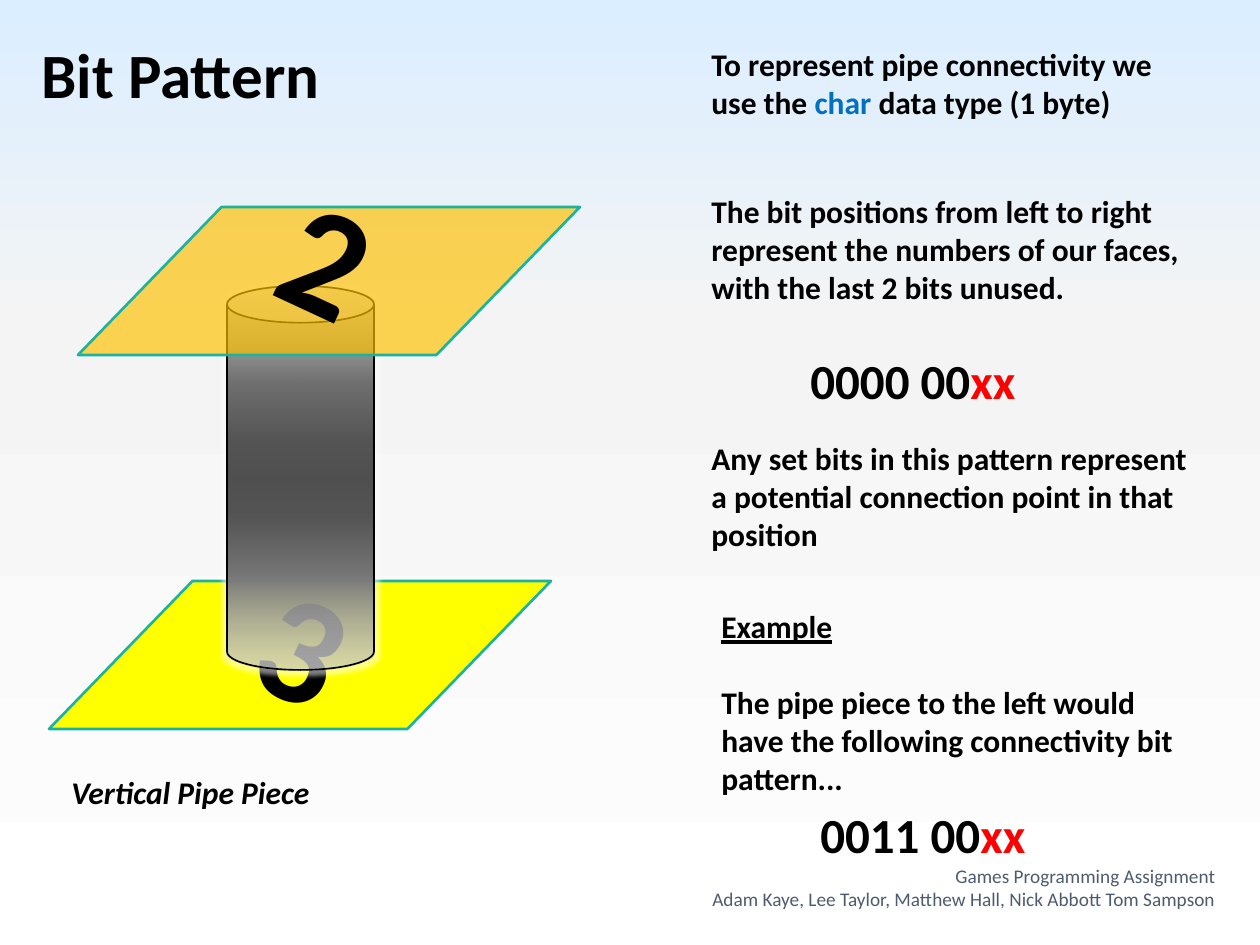
from lxml.etree import SubElement
from pptx import Presentation
from pptx.dml.color import RGBColor
from pptx.enum.shapes import MSO_SHAPE
from pptx.enum.text import MSO_ANCHOR, MSO_AUTO_SIZE, PP_ALIGN
from pptx.oxml.ns import qn
from pptx.util import Emu, Pt

BLACK, RED, BLUE, SLATE = "000000", "FF0000", "0070C0", "4E5B6F"
TEAL, YELLOW, AMBER = "1AB39F", "FFFF00", "FFC000"
SKY = [(0, "FFFFFF", 100), (65, "F4F4F4", 100), (100, "DBEEFF", 100)]
STEEL = [(0, "C0C0C0", 77), (25, "707070", 100), (40, "555555", 100), (50, "505050", 100),
         (60, "555555", 100), (75, "767676", 100), (100, "C0C0C0", 56)]


def px(length):
    return Emu(round(length * 914400 / 126))


def rgb(code):
    return RGBColor.from_string(code)


class SlideBuilder:
    """Holds the text style and the slide, and draws each kind of element."""

    def __init__(self, deck, style):
        self.style = style
        self.slide = deck.slides.add_slide(deck.slide_layouts[6])

    def add_color(self, parent, code, opacity):
        color = SubElement(parent, qn("a:srgbClr"), val=code)
        if opacity < 100:
            SubElement(color, qn("a:alpha"), val=str(opacity * 1000))

    def gradient(self, fill, owner, stops, angle):
        fill.gradient()
        fill.gradient_angle = angle
        stop_list = next(owner.iter(qn("a:gsLst")))
        for old_stop in list(stop_list):
            stop_list.remove(old_stop)
        for position, code, opacity in stops:
            stop = SubElement(stop_list, qn("a:gs"), pos=str(position * 1000))
            self.add_color(stop, code, opacity)

    def background(self, stops, angle):
        self.gradient(self.slide.background.fill, self.slide.element, stops, angle)

    def outlined(self, preset, box, line, weight):
        shape = self.slide.shapes.add_shape(preset, *map(px, box))
        shape.shadow.inherit = False
        shape.line.color.rgb = rgb(line)
        shape.line.width = Pt(weight)
        return shape

    def face(self, left, top, code, opacity=100):
        face = self.outlined(MSO_SHAPE.PARALLELOGRAM, (left, top, 502, 148), TEAL, 1.5)
        face.adjustments[0] = 0.97
        face.fill.solid()
        face.fill.fore_color.rgb = rgb(code)
        if opacity < 100:
            color = face.element.spPr.find(qn("a:solidFill"))[0]
            SubElement(color, qn("a:alpha"), val=str(opacity * 1000))

    def pipe(self, box):
        pipe = self.outlined(MSO_SHAPE.CAN, box, BLACK, 0.94)
        self.gradient(pipe.fill, pipe.element, STEEL, 270)
        effects = pipe.element.spPr.find(qn("a:effectLst"))
        glow = SubElement(effects, qn("a:glow"), rad=str(px(9)))
        self.add_color(glow, "FFFFFF", 50)

    def text(self, box, *paragraphs, rotation=0, gap=0, align=PP_ALIGN.LEFT,
             anchor=MSO_ANCHOR.TOP, fit=MSO_AUTO_SIZE.SHAPE_TO_FIT_TEXT, **style):
        label = self.slide.shapes.add_textbox(*map(px, box))
        label.rotation = rotation
        frame = label.text_frame
        for name, value in {"word_wrap": True, "auto_size": fit, "vertical_anchor": anchor}.items():
            setattr(frame, name, value)
        for index, runs in enumerate(paragraphs):
            paragraph = frame.add_paragraph() if index else frame.paragraphs[0]
            paragraph.alignment = align
            paragraph.space_before = Pt(gap if index else 0)
            for words, changes in runs:
                run = paragraph.add_run()
                run.text = words
                look = {**self.style, **style, **changes}
                run.font.color.rgb = rgb(look.pop("color"))
                for name, value in look.items():
                    setattr(run.font, name, value)

    def face_number(self, left, top, digit):
        self.text((left, top, 147, 199), [(digit, {})], rotation=24.9, size=Pt(88))

    def bits(self, left, top, width, pattern):
        self.text((left, top, width, 72), [(pattern, {}), ("xx", {"color": RED})], size=Pt(28))


def main():
    deck = Presentation()
    deck.slide_width, deck.slide_height = px(1260), px(945)
    page = SlideBuilder(deck, {"name": "Calibri", "size": Pt(18), "bold": True, "color": BLACK})
    page.background(SKY, 90)
    page.text((29, 29, 798, 89), [("Bit Pattern", {})], size=Pt(36))

    page.face(49, 581, YELLOW)
    page.face_number(252, 553, "3")
    page.pipe((227, 286, 147, 384))
    page.face(78, 207, AMBER, 67)
    page.face_number(276, 165, "2")
    page.text((59, 767, 423, 50), [("Vertical Pipe Piece", {})], italic=True)

    page.text((699, 39, 502, 89), [("To represent pipe connectivity we use the ", {}),
                                   ("char ", {"color": BLUE}), ("data type (1 byte)", {})])
    page.text((699, 186, 502, 127), [("The bit positions from left to right represent the numbers "
                                      "of our faces, with the last 2 bits unused.", {})])
    page.bits(798, 344, 246, "0000 00")
    page.text((699, 433, 502, 127), [("Any set bits in this pattern represent a potential "
                                      "connection point in that position", {})])
    page.text((709, 601, 502, 204), [("Example", {"underline": True})],
              [("The pipe piece to the left would have the following connectivity "
                "bit pattern...", {})], gap=22)
    page.bits(808, 798, 285, "0011 00")
    page.text((462, 867, 766, 50), [("Games Programming Assignment", {})],
              [("Adam Kaye, Lee Taylor, Matthew Hall, Nick Abbott Tom Sampson", {})],
              align=PP_ALIGN.RIGHT, anchor=MSO_ANCHOR.BOTTOM, fit=MSO_AUTO_SIZE.NONE,
              size=Pt(11), bold=False, color=SLATE)
    deck.save("out.pptx")


if __name__ == "__main__":
    main()
